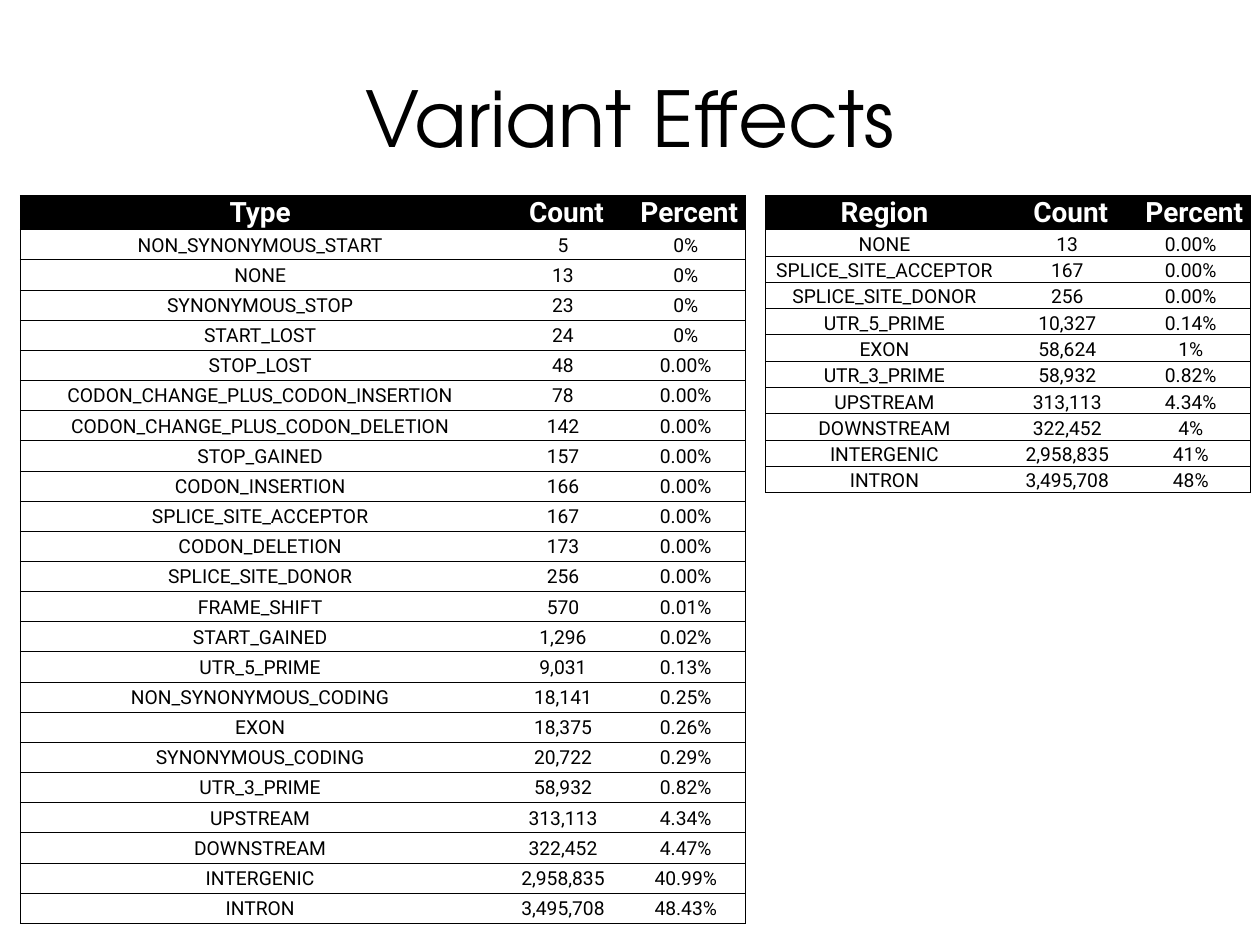
from pptx import Presentation, util as u
from pptx.dml import color
from pptx.enum import text
from pptx.oxml import parse_xml
from pptx.oxml import ns

BLACK, WHITE = "000000", "FFFFFF"
HEADER_HEIGHT = 0.69

TYPES = [
    ("Type", " Count", " Percent"),
    ("NON_SYNONYMOUS_START", "5", "0%"),
    ("NONE", "13", "0%"),
    ("SYNONYMOUS_STOP", "23", "0%"),
    ("START_LOST", "24", "0%"),
    ("STOP_LOST", "48", "0.00%"),
    ("CODON_CHANGE_PLUS_CODON_INSERTION", "78", "0.00%"),
    ("CODON_CHANGE_PLUS_CODON_DELETION", "142", "0.00%"),
    ("STOP_GAINED", "157", "0.00%"),
    ("CODON_INSERTION", "166", "0.00%"),
    ("SPLICE_SITE_ACCEPTOR", "167", "0.00%"),
    ("CODON_DELETION", "173", "0.00%"),
    ("SPLICE_SITE_DONOR", "256", "0.00%"),
    ("FRAME_SHIFT", "570", "0.01%"),
    ("START_GAINED", "1,296", "0.02%"),
    ("UTR_5_PRIME", "9,031", "0.13%"),
    ("NON_SYNONYMOUS_CODING", "18,141", "0.25%"),
    ("EXON", "18,375", "0.26%"),
    ("SYNONYMOUS_CODING", "20,722", "0.29%"),
    ("UTR_3_PRIME", "58,932", "0.82%"),
    ("UPSTREAM", "313,113", "4.34%"),
    ("DOWNSTREAM", "322,452", "4.47%"),
    ("INTERGENIC", "2,958,835", "40.99%"),
    ("INTRON", "3,495,708", "48.43%"),
]
REGIONS = [
    ("Region", " Count", " Percent"),
    ("NONE", "13", "0.00%"),
    ("SPLICE_SITE_ACCEPTOR", "167", "0.00%"),
    ("SPLICE_SITE_DONOR", "256", "0.00%"),
    ("UTR_5_PRIME", "10,327", "0.14%"),
    ("EXON", "58,624", "1%"),
    ("UTR_3_PRIME", "58,932", "0.82%"),
    ("UPSTREAM", "313,113", "4.34%"),
    ("DOWNSTREAM", "322,452", "4%"),
    ("INTERGENIC", "2,958,835", "41%"),
    ("INTRON", "3,495,708", "48%"),
]


def paint(target, value):
    """Give a fill a solid colour from a hex string."""
    target.solid()
    target.fore_color.rgb = color.RGBColor.from_string(value)


def style_para(para, font, size, value, bold=False):
    """Centre a paragraph and format its runs."""
    para.alignment = text.PP_ALIGN.CENTER
    for span in para.runs:
        span.font.name = font
        span.font.size = u.Pt(size)
        span.font.bold = bold
        paint(span.font.fill, value)


def set_border(cell, side, points):
    """Draw one cell edge in black, or hide it when points is zero."""
    ink = f'<a:solidFill><a:srgbClr val="{BLACK}"/></a:solidFill>' if points else "<a:noFill/>"
    cell._tc.get_or_add_tcPr().append(parse_xml(
        f'<a:ln{side} {ns.nsdecls("a")} w="{u.Pt(points)}">{ink}</a:ln{side}>'))


def add_title(page, wording):
    """Fill the title placeholder."""
    title = page.shapes.title
    title.left, title.top, title.width, title.height = map(u.Cm, (1.27, 0.76, 22.86, 3.18))
    title.text_frame.text = wording
    title.text_frame.vertical_anchor = text.MSO_ANCHOR.MIDDLE
    style_para(title.text_frame.paragraphs[0], "TeX Gyre Adventor", 44, BLACK)


def add_effects_table(page, box, widths, records, anchor):
    """Place a ruled table with a black header row inside the box."""
    left, top, width, height = box
    last_row, last_column = len(records) - 1, len(widths) - 1
    table = page.shapes.add_table(len(records), len(widths), *map(u.Cm, box)).table
    table.first_row = table.horz_banding = False
    for column, column_width in zip(table.columns, widths):
        column.width = u.Cm(column_width)
    for row_index, record in enumerate(records):
        header = row_index == 0
        row_height = HEADER_HEIGHT if header else (height - HEADER_HEIGHT) / last_row
        table.rows[row_index].height = u.Cm(row_height)
        for column_index, wording in enumerate(record):
            cell = table.cell(row_index, column_index)
            cell.text_frame.text = wording
            cell.vertical_anchor = anchor
            cell.margin_left = cell.margin_right = cell.margin_top = u.Cm(0.03)
            cell.margin_bottom = 0
            style_para(cell.text_frame.paragraphs[0], "Roboto",
                       16 if header else 11, WHITE if header else BLACK, header)
            set_border(cell, "L", 0.5 if column_index == 0 else 0)
            set_border(cell, "R", 0.5 if column_index == last_column else 0)
            set_border(cell, "T", 0.5)
            set_border(cell, "B", 1 if row_index == last_row else 0.5)
            if header:
                paint(cell.fill, BLACK)
            else:
                cell.fill.background()


def main():
    """Build the variant effects slide."""
    deck = Presentation()
    deck.slide_width, deck.slide_height = u.Cm(25.4), u.Cm(19.05)
    page = deck.slides.add_slide(deck.slide_layouts[5])
    add_title(page, "Variant Effects")
    add_effects_table(page, (0.41, 3.94, 14.62, 14.68), (9.67, 2.54, 2.41),
                      TYPES, text.MSO_ANCHOR.MIDDLE)
    add_effects_table(page, (15.43, 3.94, 9.78, 5.99), (4.8, 2.57, 2.41),
                      REGIONS, text.MSO_ANCHOR.BOTTOM)
    deck.save("out.pptx")


if __name__ == "__main__":
    main()
